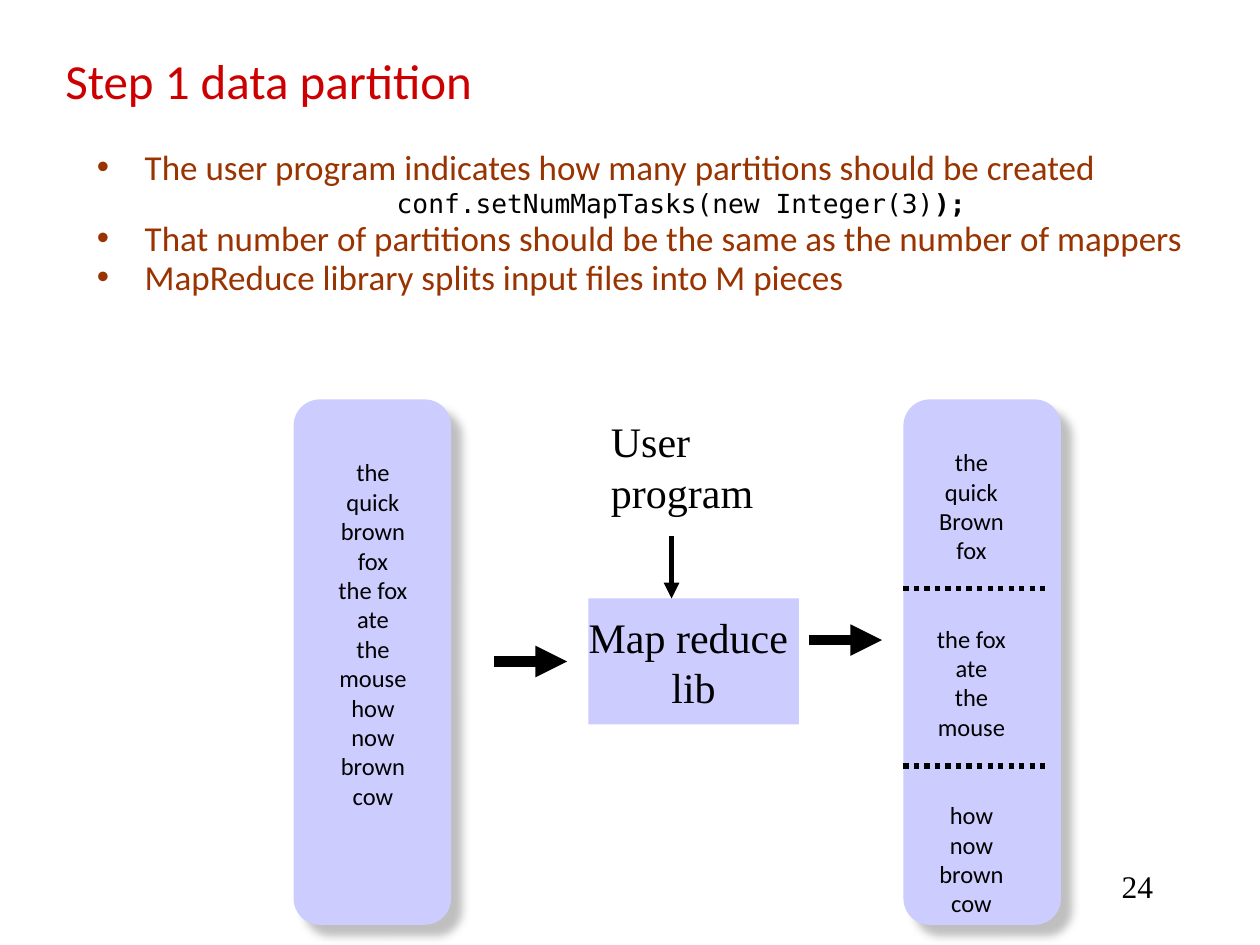
from dataclasses import dataclass
import lxml.etree
import pptx
import pptx.dml.color
import pptx.enum.dml
import pptx.enum.shapes
import pptx.enum.text
import pptx.oxml.ns
import pptx.util

Inches, Pt = pptx.util.Inches, pptx.util.Pt
Align, Anchor = pptx.enum.text.PP_ALIGN, pptx.enum.text.MSO_ANCHOR
Kind = pptx.enum.shapes.MSO_SHAPE
qn = pptx.oxml.ns.qn

HUES = {"title": "CC0000", "body": "993300", "ink": "000000",
        "panel": "CCCCFF", "shade": "808080"}
SANS, MONO, SERIF = "Calibri", "DejaVu Sans Mono", "Times New Roman"


@dataclass
class Style:
    font: str
    size: float
    hue: str = "ink"
    align: Align = Align.LEFT


@dataclass
class Line:
    start: tuple
    end: tuple
    width: float
    arrow: bool = True


def rgb(hue: str):
    return pptx.dml.color.RGBColor.from_string(HUES[hue])


def write(frame, texts: list, style: Style, wrap: bool = True) -> list:
    """Fill a frame with one paragraph per text."""
    frame.word_wrap = wrap
    paras = []
    for i, text in enumerate(texts):
        para = frame.add_paragraph() if i else frame.paragraphs[0]
        para.text = text
        para.alignment = style.align
        set_font(para, style)
        paras.append(para)
    return paras


def set_font(para, style: Style) -> None:
    para.font.name = style.font
    para.font.size = Pt(style.size)
    para.font.color.rgb = rgb(style.hue)


def add_text(slide, box: tuple, texts: list, style: Style) -> list:
    frame = slide.shapes.add_textbox(*map(Inches, box)).text_frame
    return write(frame, texts, style)


def indent(para, left: float, hang: float = 0, bullet: bool = False) -> None:
    props = para._p.get_or_add_pPr()
    props.set("marL", str(Inches(left)))
    props.set("indent", str(Inches(-hang)))
    if bullet:
        lxml.etree.SubElement(props, qn("a:buFont"), typeface="Arial")
        lxml.etree.SubElement(props, qn("a:buChar"), char="•")


def add_box(slide, kind: Kind, box: tuple):
    shape = slide.shapes.add_shape(kind, *map(Inches, box))
    shape.shadow.inherit = False
    shape.fill.solid()
    shape.fill.fore_color.rgb = rgb("panel")
    shape.line.fill.background()
    return shape


def add_panel(slide, left: float) -> None:
    """Draw a rounded panel with a soft shadow."""
    shape = add_box(slide, Kind.ROUNDED_RECTANGLE, (left, 3.17, 1.25, 4.17))
    shape.adjustments[0] = 0.167
    effects = shape._element.spPr.find(qn("a:effectLst"))
    shade = lxml.etree.SubElement(
        effects, qn("a:outerShdw"), blurRad=str(Pt(5)), dist=str(Pt(8.5)),
        dir=str(45 * 60000), algn="ctr", rotWithShape="0")
    color = lxml.etree.SubElement(shade, qn("a:srgbClr"), val=HUES["shade"])
    lxml.etree.SubElement(color, qn("a:alpha"), val="50000")


def add_line(slide, line: Line) -> None:
    link = slide.shapes.add_connector(
        pptx.enum.shapes.MSO_CONNECTOR.STRAIGHT,
        *map(Inches, line.start + line.end))
    link.line.color.rgb = rgb("ink")
    link.line.width = Pt(line.width)
    if line.arrow:
        lxml.etree.SubElement(link.line._get_or_add_ln(), qn("a:tailEnd"),
                              type="triangle")
    else:
        link.line.dash_style = pptx.enum.dml.MSO_LINE.ROUND_DOT
    lxml.etree.SubElement(link._element.spPr, qn("a:effectLst"))


def add_points(slide) -> None:
    """Write the bullets and the line of code between them."""
    code = "conf.setNumMapTasks(new Integer(3)"
    paras = add_text(slide, (0.67, 1.17, 8.92, 1.58), [
        "The user program indicates how many partitions should be created",
        code,
        "That number of partitions should be the same as the number of mappers",
        "MapReduce library splits input files into M pieces",
    ], Style(SANS, 20, "body"))
    for para in paras:
        para.line_spacing = 0.8
        para.space_before = Pt(3.4)
        if para.text == code:
            set_font(para, Style(MONO, 15))
            indent(para, 2.38)
            end = para.add_run()
            end.text = ");"
            end.font.bold = True
        else:
            indent(para, 0.38, 0.38, bullet=True)


def main() -> None:
    deck = pptx.Presentation()
    deck.slide_width, deck.slide_height = Inches(10), Inches(7.5)
    slide = deck.slides.add_slide(deck.slide_layouts[6])
    words = Style(SANS, 14, align=Align.CENTER)
    label = Style(SERIF, 24)

    # Page number, title and points
    add_text(slide, (7.17, 6.83, 2.08, 0.5), ["24"],
             Style(SERIF, 18, align=Align.RIGHT))
    title = add_text(slide, (0.42, 0.42, 9.17, 0.42),
                     ["Step 1 data partition"], Style(SANS, 28, "title"))
    title[0]._parent.vertical_anchor = Anchor.MIDDLE
    add_points(slide)

    # Split output: three parts with dotted rules between
    add_panel(slide, 7.17)
    parts = [["the quick", "Brown", "fox"], ["the fox ate", "the mouse"],
             ["how now", "brown cow"]]
    paras = add_text(slide, (7.25, 3.5, 0.92, 3.82), sum(parts, []), words)
    for para in paras:
        if para.text in (parts[1][0], parts[2][0]):
            para.space_before = Pt(33.6)
    for y in (4.67, 6.08):
        add_line(slide, Line((7.17, y), (8.33, y), 3, arrow=False))

    # Whole input
    add_panel(slide, 2.33)
    add_text(slide, (2.5, 3.58, 0.92, 2.89),
             ["the quick", "brown fox", "the fox ate", "the mouse", "how now",
              "brown cow"], words)

    # Library and user program
    lib = add_box(slide, Kind.RECTANGLE, (4.67, 4.75, 1.67, 1))
    lib.text_frame.vertical_anchor = Anchor.MIDDLE
    write(lib.text_frame, ["Map reduce ", "lib"],
          Style(SERIF, 24, align=Align.CENTER), wrap=False)
    user = add_text(slide, (4.75, 3.25, 1.58, 0.9), ["User program"], label)
    user[0].space_before = Pt(2)

    # Flow arrows
    for line in (Line((3.92, 5.25), (4.5, 5.25), 6),
                 Line((6.42, 5.08), (7, 5.08), 6),
                 Line((5.33, 4.25), (5.33, 4.75), 3)):
        add_line(slide, line)

    deck.save("out.pptx")


if __name__ == "__main__":
    main()
